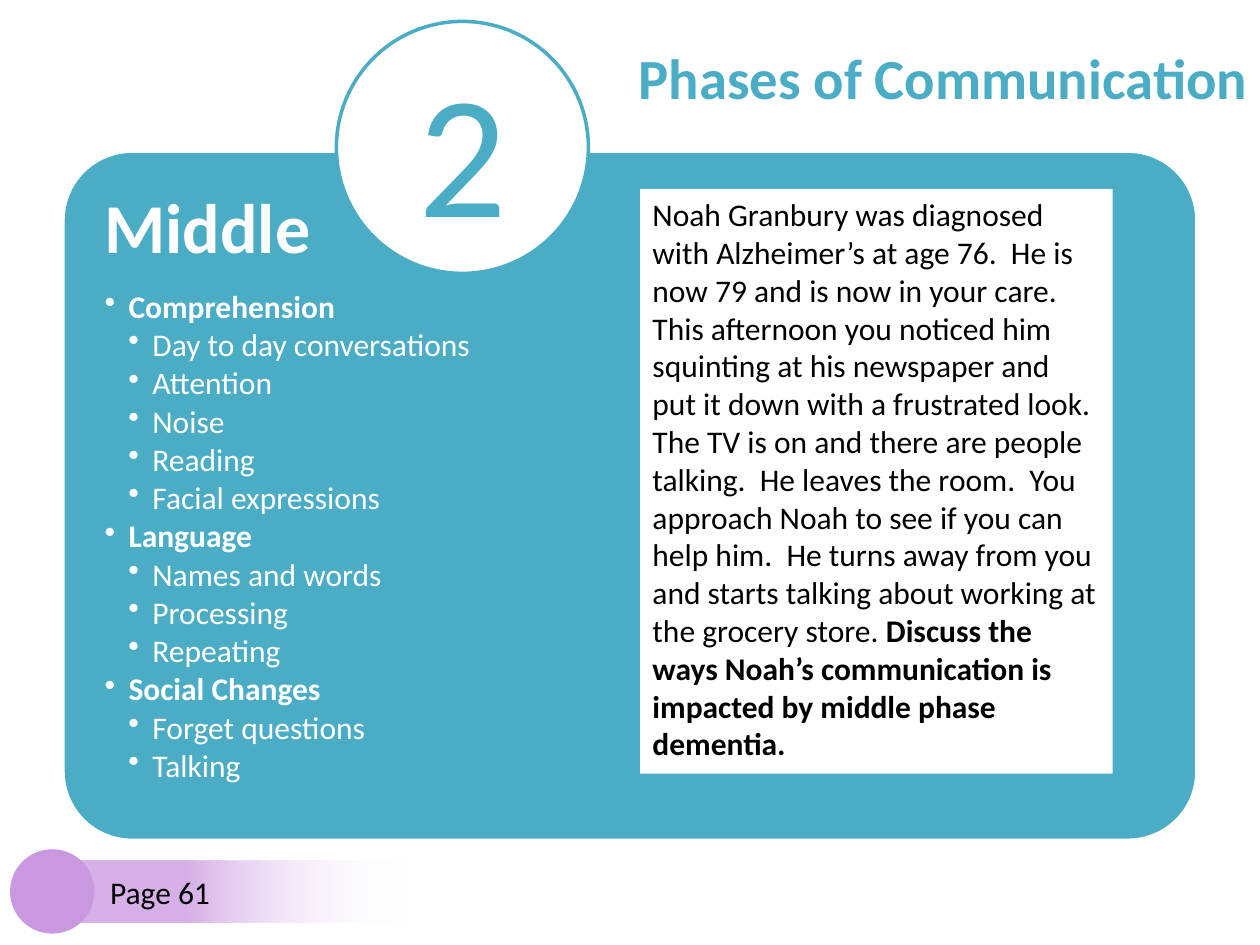
from dataclasses import dataclass

from lxml import etree
from pptx import Presentation
from pptx import util as u
from pptx.dml.color import RGBColor
from pptx.enum import shapes, text
from pptx.oxml.ns import qn


@dataclass(frozen=True)
class Theme:
    """Colours, type sizes and font of the slide."""
    font: str = "Calibri"
    teal: str = "4BACC6"
    white: str = "FFFFFF"
    black: str = "000000"
    lilac: str = "D7B0E8"
    violet: str = "CA97E1"
    title: float = 32.4
    heading: int = 40
    body: int = 18
    numeral: int = 100
    line: int = 2


TOPICS = {
    "Comprehension": ["Day to day conversations", "Attention", "Noise", "Reading", "Facial expressions"],
    "Language": ["Names and words", "Processing", "Repeating"],
    "Social Changes": ["Forget questions", "Talking"],
}
STORY = (
    "Noah Granbury was diagnosed with Alzheimer’s at age 76.  He is now 79 and is now in your care.  "
    "This afternoon you noticed him squinting at his newspaper and put it down with a frustrated look.  "
    "The TV is on and there are people talking.  He leaves the room.  You approach Noah to see if you can "
    "help him.  He turns away from you and starts talking about working at the grocery store."
)
TASK = " Discuss the ways Noah’s communication is impacted by middle phase dementia."


class PhaseSlide:
    """Draws styled elements on one slide, on a grid of 100 columns by 75 rows."""

    def __init__(self, deck, theme):
        """Add a blank slide and work out the grid."""
        self.theme = theme
        self.slide = deck.slides.add_slide(deck.slide_layouts[6])
        self.column = deck.slide_width / 100
        self.row = deck.slide_height / 75

    def place(self, left, top, width, height):
        """Turn grid cells into slide lengths."""
        return (round(left * self.column), round(top * self.row),
                round(width * self.column), round(height * self.row))

    def shape(self, kind, cells, fill=None, line=None):
        """Add a flat preset shape."""
        box = self.slide.shapes.add_shape(kind, *self.place(*cells))
        box.shadow.inherit = False
        if fill:
            box.fill.solid()
            box.fill.fore_color.rgb = RGBColor.from_string(fill)
        if line:
            box.line.color.rgb = RGBColor.from_string(line)
            box.line.width = u.Pt(self.theme.line)
        else:
            box.line.fill.background()
        return box

    def textbox(self, cells):
        """Add an empty wrapping text box."""
        box = self.slide.shapes.add_textbox(*self.place(*cells))
        box.text_frame.word_wrap = True
        return box

    def fade(self, box, start, end):
        """Fill a shape from one colour to a clear other one, left to right."""
        box.fill.gradient()
        box.fill.gradient_angle = 0
        for stop, position, color in zip(box.fill.gradient_stops, (0.3, 0.88), (start, end)):
            stop.position = position
            stop.color.rgb = RGBColor.from_string(color)
        clear = box.element.findall(".//" + qn("a:gs"))[-1].find(qn("a:srgbClr"))
        etree.SubElement(clear, qn("a:alpha"), val="0")

    def label(self, box, words, size, color, bold=False, align=text.PP_ALIGN.LEFT,
              anchor=text.MSO_ANCHOR.MIDDLE):
        """Fill the first paragraph of a box."""
        box.text_frame.vertical_anchor = anchor
        para = box.text_frame.paragraphs[0]
        para.alignment = align
        self.style(para, size, color, bold)
        para.add_run().text = words
        return para

    def style(self, para, size, color, bold):
        """Set the font of a paragraph."""
        para.font.name = self.theme.font
        para.font.size = u.Pt(size)
        para.font.bold = bold
        para.font.color.rgb = RGBColor.from_string(color)

    def bullet(self, box, words, level):
        """Add a bulleted paragraph, bold on the first level."""
        para = box.text_frame.add_paragraph()
        para.level = level
        para.line_spacing = 0.9
        para.space_after = u.Pt(2.4)
        self.style(para, self.theme.body, self.theme.white, level == 1)
        para.add_run().text = words
        step = u.Inches(0.19)
        props = para._p.get_or_add_pPr()
        props.set("marL", str(step * level))
        props.set("indent", str(-step))
        mark = etree.Element(qn("a:buChar"), char="•")
        props.find(qn("a:defRPr")).addprevious(mark)


def main():
    """Build and save the slide."""
    deck = Presentation()
    deck.slide_width, deck.slide_height = u.Inches(10), u.Inches(7.5)
    theme = Theme()
    page = PhaseSlide(deck, theme)
    kinds = shapes.MSO_SHAPE

    title = page.textbox((10, 3, 90, 6.2))
    page.label(title, "Phases of Communication", theme.title, theme.teal, True, text.PP_ALIGN.RIGHT)

    panel = page.shape(kinds.ROUNDED_RECTANGLE, (5, 12, 90, 54.7), theme.teal, theme.white)
    panel.adjustments[0] = 0.1

    topics = page.textbox((6.6, 13.6, 86.8, 51.5))
    frame = topics.text_frame
    frame.margin_left = frame.margin_right = frame.margin_top = frame.margin_bottom = u.Inches(0.17)
    heading = page.label(topics, "Middle", theme.heading, theme.white, True, anchor=text.MSO_ANCHOR.TOP)
    heading.line_spacing = 0.9
    heading.space_after = u.Pt(13)
    for topic, details in TOPICS.items():
        page.bullet(topics, topic, 1)
        for detail in details:
            page.bullet(topics, detail, 2)

    badge = page.shape(kinds.OVAL, (26.7, 1.7, 20, 20), theme.white, theme.teal)
    page.label(badge, "2", theme.numeral, theme.teal, align=text.PP_ALIGN.CENTER)

    card = page.shape(kinds.RECTANGLE, (50.8, 15, 37.5, 46.4), theme.white)
    story = page.label(card, STORY, theme.body, theme.black, anchor=text.MSO_ANCHOR.TOP)
    card.text_frame.auto_size = text.MSO_AUTO_SIZE.SHAPE_TO_FIT_TEXT
    span = story.add_run()
    span.text = TASK
    span.font.bold = True

    footer = page.shape(kinds.ROUNDED_RECTANGLE, (5.8, 68.3, 30, 4.9))
    page.fade(footer, theme.lilac, theme.white)
    footer.text_frame.margin_left = u.Inches(0.27)
    page.label(footer, "Page 61", theme.body, theme.black)
    page.shape(kinds.OVAL, (0.8, 67.4, 6.7, 6.7), theme.violet)

    deck.save("out.pptx")


if __name__ == "__main__":
    main()
